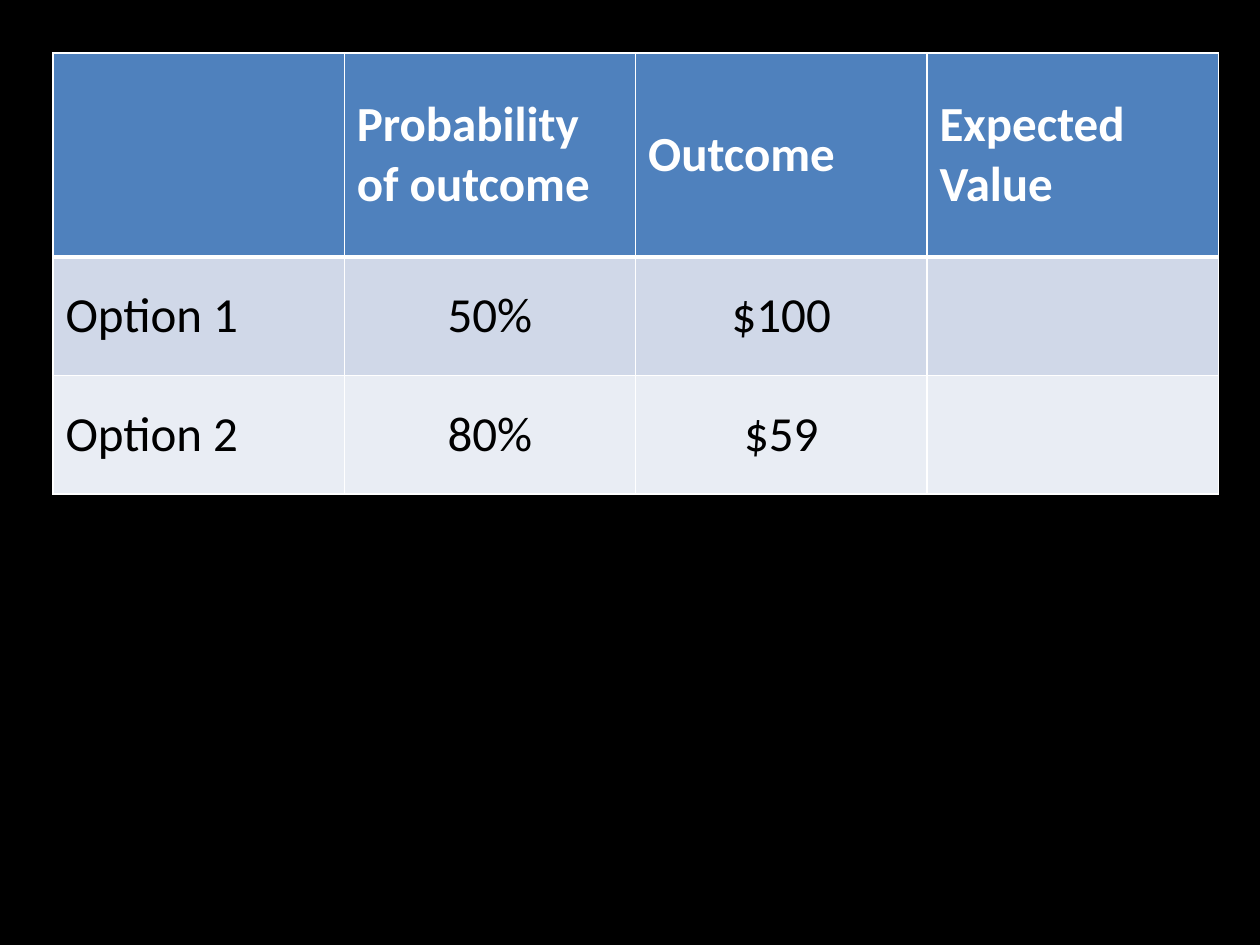
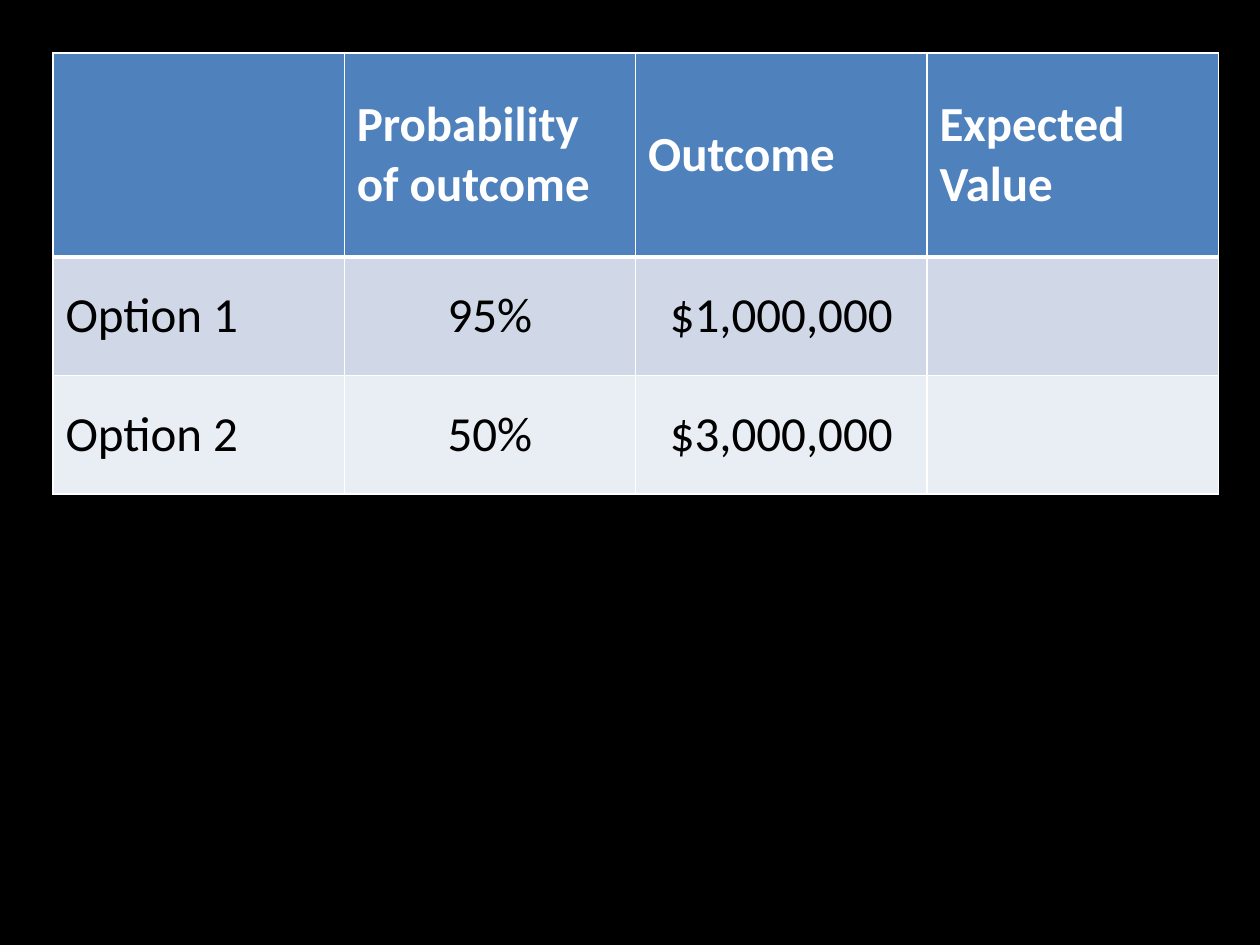
from lxml.etree import SubElement
from pptx import Presentation
from pptx.dml.color import RGBColor
from pptx.enum.text import MSO_ANCHOR as Anchor, PP_ALIGN as Align
from pptx.oxml.ns import qn
from pptx.util import Inches, Pt

# Content: the options compared on each slide
HEADINGS = ["", "Probability of outcome", "Outcome", "Expected Value"]
COMPARISONS = [
    [("Option 1", "50%", "$100", ""),
     ("Option 2", "80%", "$59", "")],
    [("Option 1", "95%", "$1,000,000", ""),
     ("Option 2", "50%", "$3,000,000", "")],
]

# Shared style
FONT, SIZE = "Calibri", 28
BLACK, WHITE, HEADING_BLUE = "000000", "FFFFFF", "4F81BD"
BANDS = ["D0D8E8", "E9EDF4"]
MARGIN, TABLE_WIDTH = 0.42, 9.25
HEADING_HEIGHT, OPTION_HEIGHT = 1.62, 0.94
THIN, THICK = 1, 3


def color(hex_code):
    return RGBColor.from_string(hex_code)


def write(cell, text, ink=BLACK, bold=False, align=Align.LEFT):
    cell.vertical_anchor = Anchor.MIDDLE
    paragraph = cell.text_frame.paragraphs[0]
    paragraph.alignment = align
    paragraph.font.size = Pt(SIZE)
    if text:
        run = paragraph.add_run()
        run.text = text
        run.font.name, run.font.size, run.font.bold = FONT, Pt(SIZE), bold
        run.font.color.rgb = color(ink)


def paint(cell, fill, top=THIN, bottom=THIN):
    """Give the cell white borders and a solid fill."""
    properties = cell._tc.get_or_add_tcPr()
    for side, width in zip("LRTB", (THIN, THIN, top, bottom)):
        line = SubElement(properties, qn(f"a:ln{side}"), w=str(Pt(width)))
        SubElement(SubElement(line, qn("a:solidFill")), qn("a:srgbClr"), val=WHITE)
    cell.fill.solid()
    cell.fill.fore_color.rgb = color(fill)


def add_comparison(deck, options):
    slide = deck.slides.add_slide(deck.slide_layouts[6])
    slide.background.fill.solid()
    slide.background.fill.fore_color.rgb = color(BLACK)

    heights = [HEADING_HEIGHT] + [OPTION_HEIGHT] * len(options)
    table = slide.shapes.add_table(
        len(heights), len(HEADINGS), Inches(MARGIN), Inches(MARGIN),
        Inches(TABLE_WIDTH), Inches(sum(heights))).table
    for row, height in zip(table.rows, heights):
        row.height = Inches(height)

    # Heading row, with a thick rule below it
    for cell, heading in zip(table.rows[0].cells, HEADINGS):
        write(cell, heading, ink=WHITE, bold=True)
        paint(cell, HEADING_BLUE, bottom=THICK)

    # One banded row per option
    for number, option in enumerate(options):
        for column, value in enumerate(option):
            cell = table.cell(number + 1, column)
            write(cell, value, align=Align.CENTER if column else Align.LEFT)
            paint(cell, BANDS[number % len(BANDS)], top=THIN if number else THICK)


def main():
    deck = Presentation()
    deck.slide_width, deck.slide_height = Inches(10), Inches(7.5)
    for options in COMPARISONS:
        add_comparison(deck, options)
    deck.save("out.pptx")


if __name__ == "__main__":
    main()
